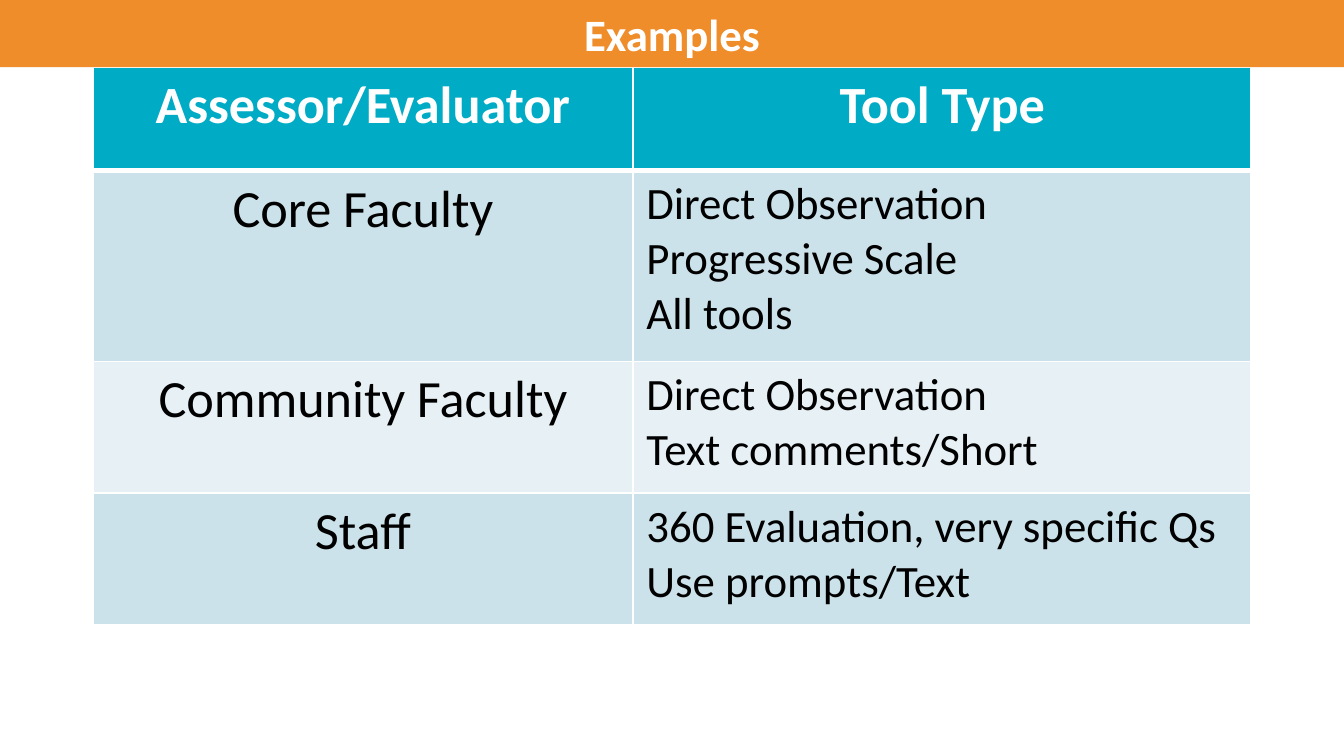
from dataclasses import dataclass

from lxml.etree import SubElement
from pptx import Presentation
from pptx.dml.color import RGBColor
from pptx.enum.shapes import MSO_SHAPE
from pptx.enum.text import MSO_ANCHOR, MSO_AUTO_SIZE, PP_ALIGN
from pptx.oxml.ns import qn
from pptx.slide import Slide
from pptx.table import _Cell as Cell
from pptx.text.text import TextFrame
from pptx.util import Inches, Pt

WHITE, BLACK = "FFFFFF", "000000"
ORANGE, TEAL = "EF8D2B", "00ABC5"
BANDS = ("CCE2EA", "E7F1F5")
FONT = "Calibri"
SLIDE_WIDTH = Inches(10)
SLIDE_HEIGHT = SLIDE_WIDTH * 9 // 16


@dataclass(frozen=True)
class TextStyle:
    size: int
    color: str
    bold: bool = False
    align: PP_ALIGN = PP_ALIGN.CENTER


@dataclass(frozen=True)
class AssessorRow:
    assessor: str
    tools: tuple[str, ...]
    height: float


TITLE = TextStyle(24, WHITE, True)
HEADING = TextStyle(28, WHITE, True)
ASSESSOR = TextStyle(28, BLACK)
TOOL = TextStyle(24, BLACK, align=PP_ALIGN.LEFT)

HEADINGS = ("Assessor/Evaluator", "Tool Type")
HEADING_HEIGHT = 0.77
COLUMN_WIDTHS = (4.02, 4.6)
ROWS = (
    AssessorRow("Core Faculty",
                ("Direct Observation", "Progressive Scale", "All tools"), 1.42),
    AssessorRow("Community Faculty",
                ("Direct Observation", "Text comments/Short"), 0.98),
    AssessorRow("Staff",
                ("360 Evaluation, very specific Qs", "Use prompts/Text"), 0.98),
)


def rgb(value: str) -> RGBColor:
    return RGBColor.from_string(value)


def write_lines(frame: TextFrame, lines: tuple[str, ...], style: TextStyle) -> None:
    for index, line in enumerate(lines):
        paragraph = frame.paragraphs[0] if index == 0 else frame.add_paragraph()
        paragraph.alignment = style.align
        run = paragraph.add_run()
        run.text = line
        run.font.name = FONT
        run.font.size = Pt(style.size)
        run.font.bold = style.bold
        run.font.color.rgb = rgb(style.color)


def set_borders(cell: Cell, top: float, bottom: float) -> None:
    properties = cell._tc.get_or_add_tcPr()
    for side, width in (("L", 1), ("R", 1), ("T", top), ("B", bottom)):
        line = SubElement(properties, qn(f"a:ln{side}"), w=str(Pt(width)))
        fill = SubElement(line, qn("a:solidFill"))
        SubElement(fill, qn("a:srgbClr"), val=WHITE)


def fill_cell(cell: Cell, lines: tuple[str, ...], style: TextStyle, color: str,
              top: float = 1, bottom: float = 1) -> None:
    set_borders(cell, top, bottom)
    cell.fill.solid()
    cell.fill.fore_color.rgb = rgb(color)
    write_lines(cell.text_frame, lines, style)


def add_assessor_table(slide: Slide) -> None:
    heights = (HEADING_HEIGHT, *(row.height for row in ROWS))
    table = slide.shapes.add_table(
        len(heights), len(COLUMN_WIDTHS), Inches(0.69), Inches(0.5),
        Inches(sum(COLUMN_WIDTHS)), Inches(sum(heights))).table
    for column, width in zip(table.columns, COLUMN_WIDTHS):
        column.width = Inches(width)
    for table_row, height in zip(table.rows, heights):
        table_row.height = Inches(height)
    for column, heading in enumerate(HEADINGS):
        fill_cell(table.cell(0, column), (heading,), HEADING, TEAL, bottom=3)
    for index, row in enumerate(ROWS):
        band = BANDS[index % 2]
        top = 3 if index == 0 else 1
        fill_cell(table.cell(index + 1, 0), (row.assessor,), ASSESSOR, band, top)
        fill_cell(table.cell(index + 1, 1), row.tools, TOOL, band, top)


def add_title_bar(slide: Slide, title: str) -> None:
    bar = slide.shapes.add_shape(
        MSO_SHAPE.RECTANGLE, 0, 0, SLIDE_WIDTH, Inches(0.5))
    bar.shadow.inherit = False
    bar.fill.solid()
    bar.fill.fore_color.rgb = rgb(ORANGE)
    bar.line.fill.background()
    frame = bar.text_frame
    frame.word_wrap = True
    frame.auto_size = MSO_AUTO_SIZE.SHAPE_TO_FIT_TEXT
    frame.vertical_anchor = MSO_ANCHOR.TOP
    write_lines(frame, (title,), TITLE)


def main() -> None:
    presentation = Presentation()
    presentation.slide_width = SLIDE_WIDTH
    presentation.slide_height = SLIDE_HEIGHT
    slide = presentation.slides.add_slide(presentation.slide_layouts[6])
    add_assessor_table(slide)
    add_title_bar(slide, "Examples")
    presentation.save("out.pptx")


if __name__ == "__main__":
    main()
